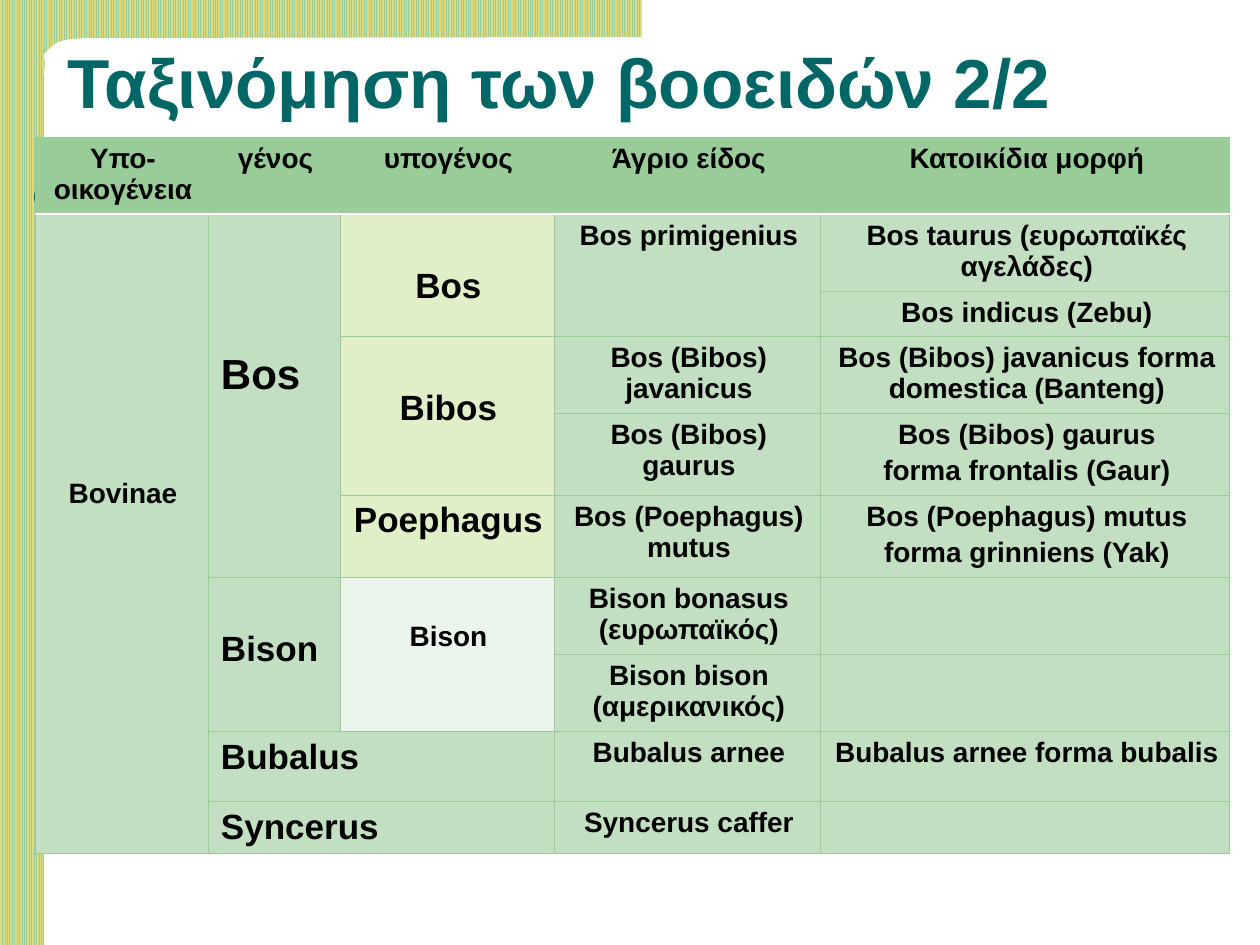
from pptx import Presentation
from pptx.dml.color import RGBColor
from pptx.enum.dml import MSO_PATTERN
from pptx.enum.shapes import MSO_SHAPE
from pptx.enum.text import MSO_ANCHOR, PP_ALIGN
from pptx.oxml.ns import qn
from pptx.util import Pt
from lxml import etree

PX = 914400 / 126
LEFT, CENTER = PP_ALIGN.LEFT, PP_ALIGN.CENTER
STRIPES = MSO_PATTERN.LIGHT_VERTICAL
C = {
    "green": "99CC99", "sand": "DBDB83", "teal": "006666", "black": "000000",
    "white": "FFFFFF", "body": "C2DFC2", "lime": "E0EFC7", "pale": "EAF4EA",
}


def px(n):
    return round(n * PX)


def write(tf, text, size=16, color="black", align=CENTER, before=0, spacing=None):
    for i, line in enumerate(text.split("\n")):
        p = tf.paragraphs[0] if i == 0 else tf.add_paragraph()
        p.alignment = align
        if i:
            p.space_before = Pt(before)
        if spacing:
            p.line_spacing = spacing
        r = p.add_run()
        r.text = line
        r.font.name = "Arial"
        r.font.size = Pt(size)
        r.font.bold = True
        r.font.color.rgb = RGBColor.from_string(C[color])


prs = Presentation()
prs.slide_width, prs.slide_height = px(1260), px(945)
slide = prs.slides.add_slide(prs.slide_layouts[6])
shapes = slide.shapes

# Striped frame: left band and top band with a rounded inner corner
band = shapes.add_shape(MSO_SHAPE.RECTANGLE, 0, 0, px(44), px(945))
fb = shapes.build_freeform(642, -2, scale=PX)
fb.add_line_segments([
    (642, 37), (118, 38), (87, 38), (70, 39), (58, 42), (51, 47), (45, 53),
    (41, 55), (39, 59), (44, 76), (45, 64), (43, 42), (43, 0)])
for s in (band, fb.convert_to_shape()):
    s.shadow.inherit = False
    s.line.fill.background()
    s.fill.patterned()
    s.fill.pattern = STRIPES
    s.fill.fore_color.rgb = RGBColor.from_string(C["green"])
    s.fill.back_color.rgb = RGBColor.from_string(C["sand"])

# Rounded teal end at the table's left edge
s = shapes.add_shape(MSO_SHAPE.FLOWCHART_DELAY, px(34), px(175), px(59), px(44))
s.shadow.inherit = False
s.line.fill.background()
s.fill.solid()
s.fill.fore_color.rgb = RGBColor.from_string(C["teal"])
s._element.spPr.get_or_add_xfrm().set("flipH", "1")

# Title
tf = shapes.add_textbox(px(55), px(38), px(1092), px(92)).text_frame
tf.word_wrap = True
tf.vertical_anchor = MSO_ANCHOR.BOTTOM
write(tf, "Ταξινόμηση των βοοειδών 2/2", size=39.6, color="teal", align=LEFT, spacing=0.9)

# Table grid
cols = [173, 132, 214, 267, 409]
rows = [75, 74, 45, 75, 80, 81, 75, 75, 70, 51]
table = shapes.add_table(len(rows), len(cols), px(35), px(137),
                         px(sum(cols)), px(sum(rows))).table
table.first_row = table.horz_banding = False
for i, w in enumerate(cols):
    table.columns[i].width = px(w)
for i, h in enumerate(rows):
    table.rows[i].height = px(h)

# Merged cells: row, column, last row, last column
for r1, c1, r2, c2 in [(1, 0, 9, 0), (1, 1, 5, 1), (1, 2, 2, 2), (1, 3, 2, 3),
                       (3, 2, 4, 2), (6, 1, 7, 1), (6, 2, 7, 2),
                       (8, 1, 8, 2), (9, 1, 9, 2)]:
    table.cell(r1, c1).merge(table.cell(r2, c2))

# Margins, borders and fills
fills = {(1, 2): "lime", (2, 2): "lime", (3, 2): "lime", (4, 2): "lime",
         (5, 2): "lime", (6, 2): "pale", (7, 2): "pale"}
for r in range(len(rows)):
    for c in range(len(cols)):
        cell = table.cell(r, c)
        cell.margin_left, cell.margin_right = px(13), px(10)
        cell.margin_top, cell.margin_bottom = px(0 if cell.is_spanned else 6), px(4)
        tcPr = cell._tc.get_or_add_tcPr()
        for side in ("lnL", "lnR", "lnT", "lnB"):
            under_header = (r, side) in ((0, "lnB"), (1, "lnT"))
            ln = etree.SubElement(tcPr, qn("a:" + side), w=str(Pt(1 if under_header else 0.5)))
            fill = etree.SubElement(ln, qn("a:solidFill"))
            etree.SubElement(fill, qn("a:srgbClr"), val=C["white" if under_header else "green"])
        cell.fill.solid()
        name = "green" if r == 0 else fills.get((r, c), "body")
        cell.fill.fore_color.rgb = RGBColor.from_string(C[name])

# Header, wild species and domestic forms
texts = {
    0: ["Υπο-οικογένεια", "γένος", "υπογένος", "Άγριο είδος", "Κατοικίδια μορφή"],
    1: ["Bos primigenius", "Bos taurus (ευρωπαϊκές αγελάδες)"],
    2: ["Bos indicus (Zebu)"],
    3: ["Bos (Bibos) javanicus", "Bos (Bibos) javanicus forma domestica (Banteng)"],
    4: ["Bos (Bibos) gaurus", "Bos (Bibos) gaurus\nforma frontalis (Gaur)"],
    5: ["Bos (Poephagus) mutus", "Bos (Poephagus) mutus\nforma grinniens (Yak)"],
    6: ["Bison bonasus (ευρωπαϊκός)", ""],
    7: ["Bison bison (αμερικανικός)", ""],
    8: ["Bubalus arnee", "Bubalus arnee forma bubalis"],
    9: ["Syncerus caffer", ""],
}
for r, line in texts.items():
    for c, text in enumerate(line, len(cols) - len(line)):
        if text:
            write(table.cell(r, c).text_frame, text, before=2.7)

# Subfamily, genera and subgenera: row, column, text, size, alignment, top margin
for r, c, text, size, align, top in [
        (1, 0, "Bovinae", 16, CENTER, 264),
        (1, 1, "Bοs", 24, LEFT, 137),
        (1, 2, "Bos", 20, CENTER, 53),
        (3, 2, "Bibos", 20, CENTER, 53),
        (5, 2, "Poephagus", 20, CENTER, 6),
        (6, 1, "Bison", 20, LEFT, 53),
        (6, 2, "Bison", 16, CENTER, 44),
        (8, 1, "Bubalus", 20, LEFT, 6),
        (9, 1, "Syncerus", 20, LEFT, 6)]:
    cell = table.cell(r, c)
    cell.margin_top = px(top)
    write(cell.text_frame, text, size=size, align=align)

prs.save("out.pptx")
